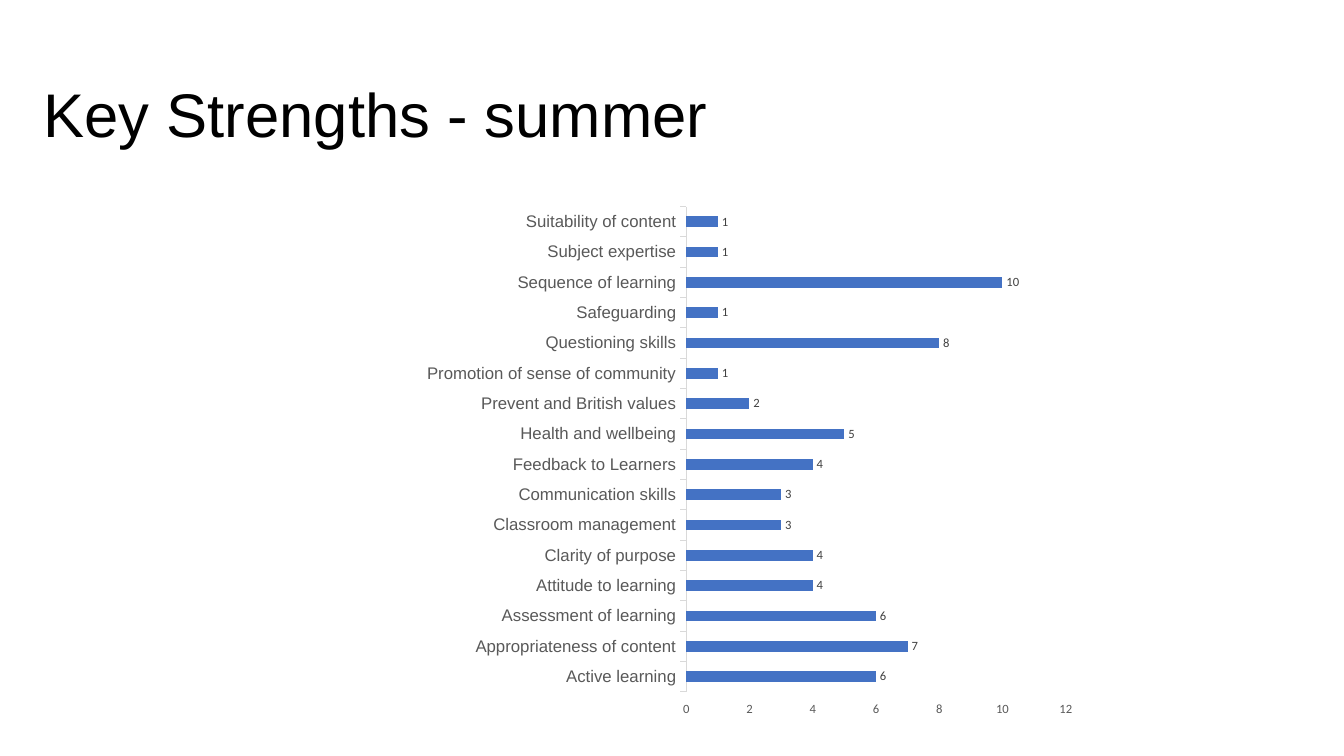
import pptx
import pptx.chart.data
import pptx.dml.color
import pptx.enum.chart
import pptx.enum.text
import pptx.oxml
import pptx.oxml.ns
import pptx.util
from pptx.util import Pt


def color(value):
    return pptx.dml.color.RGBColor.from_string(value)


def add_text(slide, text, left, top, width, height, size, font, fill):
    box = slide.shapes.add_textbox(Pt(left), Pt(top), Pt(width), Pt(height))
    frame = box.text_frame
    frame.word_wrap = True
    frame.vertical_anchor = pptx.enum.text.MSO_ANCHOR.MIDDLE
    paragraph = frame.paragraphs[0]
    paragraph.text = text
    paragraph.line_spacing = 0.9
    paragraph.font.size = Pt(size)
    paragraph.font.name = font
    paragraph.font.color.rgb = color(fill)


presentation = pptx.Presentation()
presentation.slide_width, presentation.slide_height = Pt(960), Pt(540)
slide = presentation.slides.add_slide(presentation.slide_layouts[6])

# Title
add_text(slide, "Key Strengths - summer", left=24, top=31.5, width=828, height=104.4,
         size=44, font="Arial", fill="000000")

# Strength counts, from the bottom bar up
strengths = {
    "Active learning": 6,
    "Appropriateness of content": 7,
    "Assessment of learning": 6,
    "Attitude to learning": 4,
    "Clarity of purpose": 4,
    "Classroom management": 3,
    "Communication skills": 3,
    "Feedback to Learners": 4,
    "Health and wellbeing": 5,
    "Prevent and British values": 2,
    "Promotion of sense of community": 1,
    "Questioning skills": 8,
    "Safeguarding": 1,
    "Sequence of learning": 10,
    "Subject expertise": 1,
    "Suitability of content": 1,
}
chart_data = pptx.chart.data.CategoryChartData()
chart_data.categories = list(strengths)
chart_data.add_series("Series 1", list(strengths.values()))

# Bar chart
chart = slide.shapes.add_chart(
    pptx.enum.chart.XL_CHART_TYPE.BAR_CLUSTERED,
    Pt(145.4), Pt(111.6), Pt(635), Pt(414), chart_data).chart
chart.has_title = False
chart.has_legend = False
chart.font.size = Pt(10)
chart.font.name = "Calibri"
chart.font.color.rgb = color("000000")

plot = chart.plots[0]
plot.gap_width = 182
plot.vary_by_categories = False
bars = plot.series[0].format.fill
bars.solid()
bars.fore_color.rgb = color("4472C4")

# Value labels
plot.has_data_labels = True
labels = plot.data_labels
labels.show_value = True
labels.position = pptx.enum.chart.XL_LABEL_POSITION.OUTSIDE_END

# Axes
chart.value_axis.minimum_scale = 0
chart.value_axis.maximum_scale = 12
chart.value_axis.major_unit = 2
chart.value_axis.has_major_gridlines = False
chart.value_axis.format.line.fill.background()
axis_line = chart.category_axis.format.line
axis_line.color.rgb = color("D9D9D9")
axis_line.width = Pt(0.75)

# Text formats of axes and labels
for font, name, size, fill in [
    (chart.category_axis.tick_labels.font, "Arial", 12, "595959"),
    (chart.value_axis.tick_labels.font, "Calibri", 9, "595959"),
    (labels.font, "Calibri", 9, "404040"),
]:
    font.name = name
    font.size = Pt(size)
    font.color.rgb = color(fill)

# Fixed inner plot area, as fractions of the chart
plot_area = plot._element.getparent()
for old_layout in plot_area.findall(pptx.oxml.ns.qn("c:layout")):
    plot_area.remove(old_layout)
plot_area.insert(0, pptx.oxml.parse_xml(
    f'<c:layout {pptx.oxml.ns.nsdecls("c")}><c:manualLayout>'
    '<c:layoutTarget val="inner"/><c:xMode val="edge"/><c:yMode val="edge"/>'
    '<c:x val="0.543"/><c:y val="0.087"/><c:w val="0.427"/><c:h val="0.837"/>'
    '</c:manualLayout></c:layout>'))

presentation.save("out.pptx")
